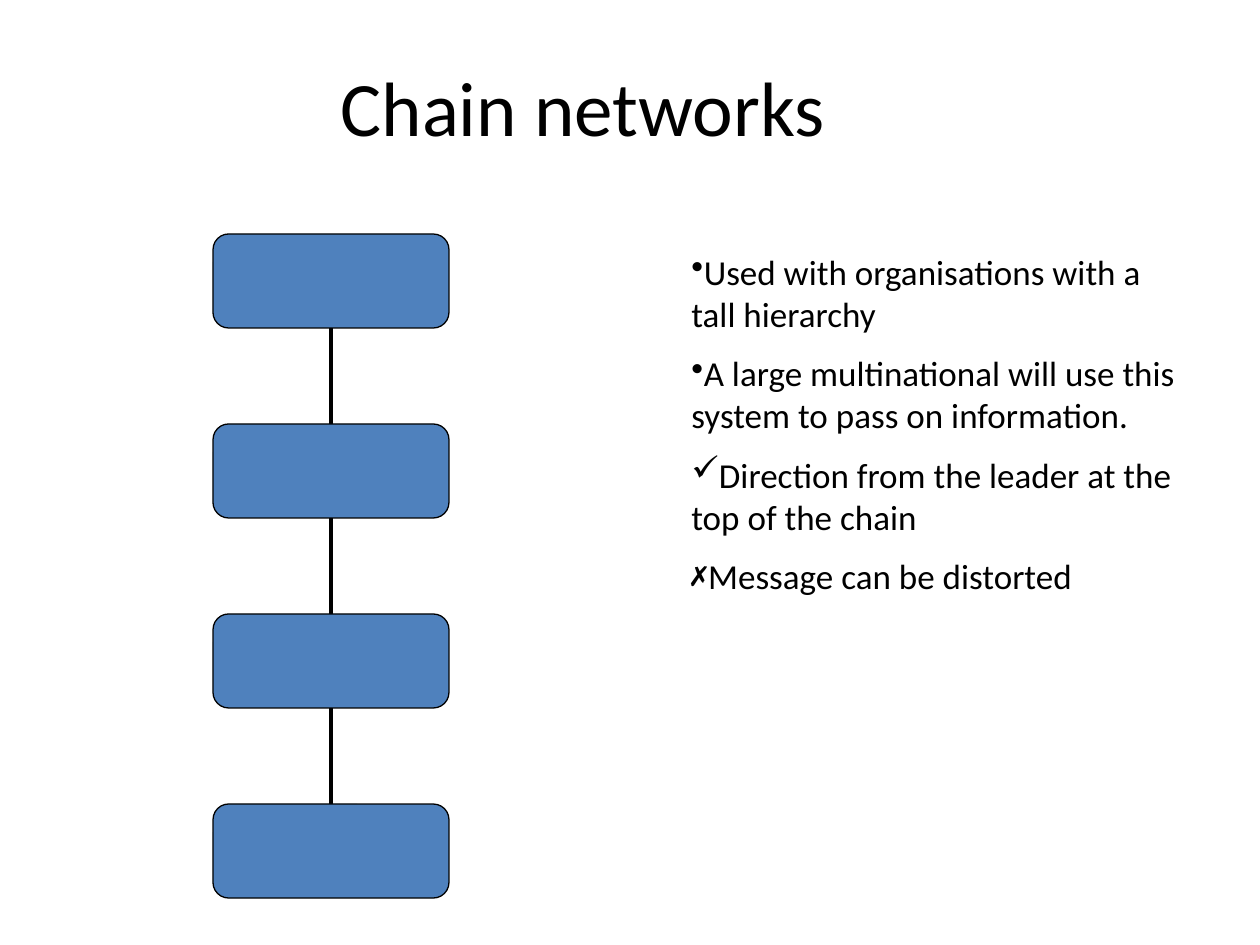
from dataclasses import dataclass

from lxml import etree
from pptx import Presentation
from pptx import util as u
from pptx.dml.color import RGBColor
from pptx.enum import shapes, text
from pptx.oxml import ns

EMU_PER_PX = 914400 / 126


@dataclass(frozen=True)
class Theme:
    font: str = "Calibri"
    ink: RGBColor = RGBColor(0x00, 0x00, 0x00)
    box_fill: RGBColor = RGBColor(0x4F, 0x81, 0xBD)
    title_size: int = 44
    body_size: int = 20
    paragraph_gap: int = 10
    box_line: float = 0.75
    link_line: float = 2.25


@dataclass(frozen=True)
class Box:
    left: int
    top: int
    width: int
    height: int

    @property
    def center(self) -> int:
        return self.left + self.width // 2

    @property
    def bottom(self) -> int:
        return self.top + self.height


@dataclass(frozen=True)
class Point:
    bullet: str
    wording: str


THEME = Theme()
TITLE = Box(63, 16, 1040, 179)
NOTES = Box(679, 244, 515, 373)
CHAIN_PITCH = 190
CHAIN = [Box(213, 234 + CHAIN_PITCH * level, 236, 94) for level in range(4)]
POINTS = [
    Point("•", "Used with organisations with a tall hierarchy"),
    Point("•", "A large multinational will use this system to pass on information."),
    Point("✓", "Direction from the leader at the top of the chain"),
    Point("✗", "Message can be distorted"),
]


def px(length: int) -> u.Emu:
    return u.Emu(round(length * EMU_PER_PX))


def place(box: Box) -> tuple:
    return px(box.left), px(box.top), px(box.width), px(box.height)


def add_text_frame(slide, box: Box, wording: str, size: int):
    """Add a wrapping text box, one paragraph per line of wording."""
    frame = slide.shapes.add_textbox(*place(box)).text_frame
    frame.word_wrap = True
    frame.text = wording
    for paragraph in frame.paragraphs:
        for run in paragraph.runs:
            run.font.name = THEME.font
            run.font.size = u.Pt(size)
            run.font.color.rgb = THEME.ink
    return frame


def add_title(slide, wording: str) -> None:
    frame = add_text_frame(slide, TITLE, wording, THEME.title_size)
    frame.vertical_anchor = text.MSO_ANCHOR.MIDDLE
    frame.paragraphs[0].alignment = text.PP_ALIGN.CENTER


def set_bullet(paragraph, symbol: str) -> None:
    properties = paragraph._p.get_or_add_pPr()
    etree.SubElement(properties, ns.qn("a:buChar")).set("char", symbol)


def add_points(slide, points: list[Point]) -> None:
    wording = "\n".join(point.wording for point in points)
    frame = add_text_frame(slide, NOTES, wording, THEME.body_size)
    for index, (paragraph, point) in enumerate(zip(frame.paragraphs, points)):
        if index:
            paragraph.space_before = u.Pt(THEME.paragraph_gap)
        set_bullet(paragraph, point.bullet)


def add_link(slide, upper: Box, lower: Box) -> None:
    link = slide.shapes.add_connector(
        shapes.MSO_CONNECTOR.STRAIGHT,
        px(lower.center), px(lower.top), px(upper.center), px(upper.bottom),
    )
    link.line.color.rgb = THEME.ink
    link.line.width = u.Pt(THEME.link_line)
    etree.SubElement(link._element.spPr, ns.qn("a:effectLst"))


def add_chain_box(slide, box: Box) -> None:
    shape = slide.shapes.add_shape(shapes.MSO_SHAPE.ROUNDED_RECTANGLE, *place(box))
    shape.shadow.inherit = False
    shape.fill.solid()
    shape.fill.fore_color.rgb = THEME.box_fill
    shape.line.color.rgb = THEME.ink
    shape.line.width = u.Pt(THEME.box_line)


def main() -> None:
    presentation = Presentation()
    presentation.slide_width = px(1260)
    presentation.slide_height = px(945)
    slide = presentation.slides.add_slide(presentation.slide_layouts[6])

    add_title(slide, "Chain networks")
    add_points(slide, POINTS)
    for upper, lower in zip(CHAIN, CHAIN[1:]):
        add_link(slide, upper, lower)
    for box in CHAIN:
        add_chain_box(slide, box)

    presentation.save("out.pptx")


if __name__ == "__main__":
    main()
